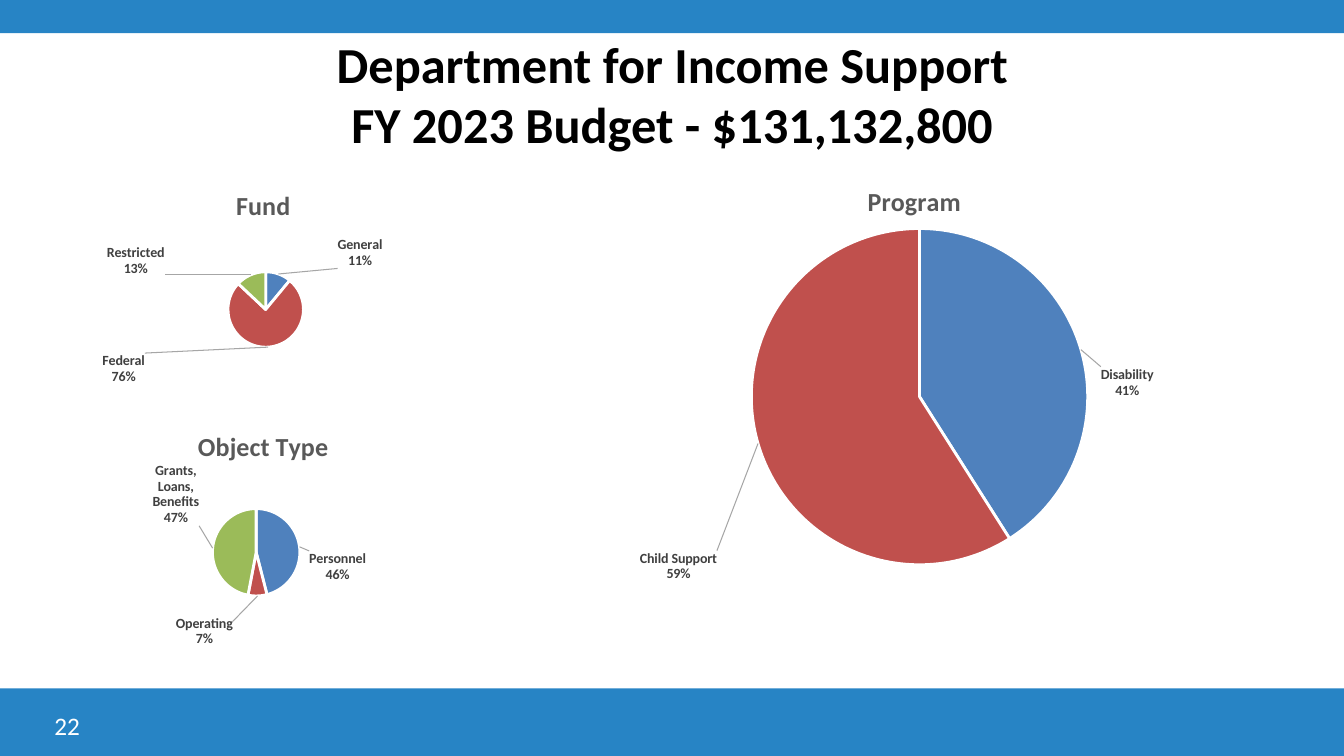
from lxml import etree
from pptx import Presentation
from pptx import util as u
from pptx.chart.data import CategoryChartData
from pptx.dml.color import RGBColor
from pptx.enum import chart as ch, shapes, text
from pptx.oxml import parse_xml
from pptx.oxml.ns import nsdecls, qn

COLORS = {"bar": "2784C5", "black": "000000", "white": "FFFFFF", "title": "595959",
          "label": "404040", "leader": "A6A6A6",
          "blue": "4F81BD", "red": "C0504D", "green": "9BBB59"}
FONT = "Calibri"


def style(font, size, color, bold=False):
    font.name = FONT
    font.size = u.Pt(size)
    font.bold = bold
    font.color.rgb = RGBColor.from_string(COLORS[color])


def layout(x, y, w=None, h=None, target=""):
    modes = '<c:xMode val="edge"/><c:yMode val="edge"/>' if target != "offset" else ""
    inner = '<c:layoutTarget val="inner"/>' if target == "inner" else ""
    size = f'<c:w val="{w}"/><c:h val="{h}"/>' if w else ""
    return (f'<c:layout {nsdecls("c")}><c:manualLayout>{inner}{modes}'
            f'<c:x val="{x}"/><c:y val="{y}"/>{size}</c:manualLayout></c:layout>')


prs = Presentation()
prs.slide_width, prs.slide_height = u.Inches(13.33), u.Inches(7.5)
s = prs.slides.add_slide(prs.slide_layouts[6])

for top, height in [(0, 0.33), (6.83, 0.67)]:
    sp = s.shapes.add_shape(shapes.MSO_SHAPE.RECTANGLE, 0, u.Inches(top),
                            prs.slide_width, u.Inches(height))
    sp.shadow.inherit = False
    sp.fill.solid()
    sp.fill.fore_color.rgb = RGBColor.from_string(COLORS["bar"])
    sp.line.fill.background()

tf = s.shapes.add_textbox(u.Inches(0.67), u.Inches(0.3), u.Inches(12), u.Inches(1.25)).text_frame
tf.word_wrap = True
tf.vertical_anchor = text.MSO_ANCHOR.MIDDLE
p = tf.paragraphs[0]
p.alignment = text.PP_ALIGN.CENTER
for i, line in enumerate(["Department for Income Support", "FY 2023 Budget - $131,132,800"]):
    if i:
        p.add_line_break()
    r = p.add_run()
    r.text = line
    style(r.font, 36, "black", True)

pies = [
    ("Fund", (0.67, 1.62, 3.78, 2.34), (0.43, 0.08), (0.42, 0.46, 0.2, 0.32),
     [("General", 11, 0.15, 0), ("Federal", 76, -0.38, 0), ("Restricted", 13, -0.22, 0.03)]),
    ("Object Type", (0.67, 4.01, 3.78, 2.41), (0.33, 0.08), (0.38, 0.43, 0.23, 0.36),
     [("Personnel", 46, 0.01, 0.15), ("Operating", 7, -0.14, 0.08),
      ("Grants, Loans, Benefits", 47, -0.02, -0.09)]),
    ("Program", (5.47, 1.62, 7.02, 4.98), (0.44, 0.03), (0.23, 0.13, 0.58, 0.67),
     [("Disability", 41, 0.02, 0.1), ("Child Support", 59, -0.05, 0.21)]),
]

for name, box, title_at, plot_at, slices in pies:
    data = CategoryChartData()
    data.categories = [label for label, *_ in slices]
    data.add_series(name, [value for _, value, *_ in slices])
    chart = s.shapes.add_chart(ch.XL_CHART_TYPE.PIE, *map(u.Inches, box), data).chart
    style(chart.font, 10, "black")
    chart.has_legend = False
    chart.has_title = True
    p = chart.chart_title.text_frame.paragraphs[0]
    r = p.add_run()
    r.text = name
    style(r.font, 18.6, "title", True)
    chart.chart_title.include_in_layout = False

    title = chart._chartSpace.find(".//" + qn("c:title"))
    plot_area = chart._chartSpace.find(".//" + qn("c:plotArea"))
    for parent in (title, plot_area):
        for old in parent.findall(qn("c:layout")):
            parent.remove(old)
    title.find(qn("c:tx")).addnext(parse_xml(layout(*title_at)))
    plot_area.insert(0, parse_xml(layout(*plot_at, target="inner")))

    plot = chart.plots[0]
    plot.vary_by_categories = True
    series = plot.series[0]
    for i, color in zip(range(len(slices)), ["blue", "red", "green"]):
        fmt = series.points[i].format
        fmt.fill.solid()
        fmt.fill.fore_color.rgb = RGBColor.from_string(COLORS[color])
        fmt.line.width = u.Pt(2)
        fmt.line.color.rgb = RGBColor.from_string(COLORS["white"])

    labels = series.data_labels
    style(labels.font, 10, "label", True)
    labels.number_format = "0%"
    labels.number_format_is_linked = False
    labels.position = ch.XL_LABEL_POSITION.OUTSIDE_END
    labels.show_value = False
    labels.show_category_name = True
    labels.show_percentage = True
    d = labels._element
    for tag in ("c:separator", "c:showLeaderLines", "c:leaderLines"):
        for old in d.findall(qn(tag)):
            d.remove(old)
    etree.SubElement(d, qn("c:separator")).text = "\n"
    shared = [etree.tostring(e, encoding="unicode") for e in d]
    for i, (_, _, dx, dy) in enumerate(slices):
        d.insert(i, parse_xml(f'<c:dLbl {nsdecls("c")}><c:idx val="{i}"/>'
                              f'{layout(dx, dy, target="offset")}{"".join(shared)}</c:dLbl>'))
    etree.SubElement(d, qn("c:showLeaderLines")).set("val", "1")
    d.append(parse_xml(f'<c:leaderLines {nsdecls("c", "a")}><c:spPr><a:ln w="9525"><a:solidFill>'
                       f'<a:srgbClr val="{COLORS["leader"]}"/></a:solidFill></a:ln></c:spPr>'
                       '</c:leaderLines>'))

tf = s.shapes.add_textbox(u.Inches(0.44), u.Inches(7), u.Inches(3.11), u.Inches(0.4)).text_frame
tf.word_wrap = True
r = tf.paragraphs[0].add_run()
r.text = "22"
style(r.font, 18, "white")

prs.save("out.pptx")
